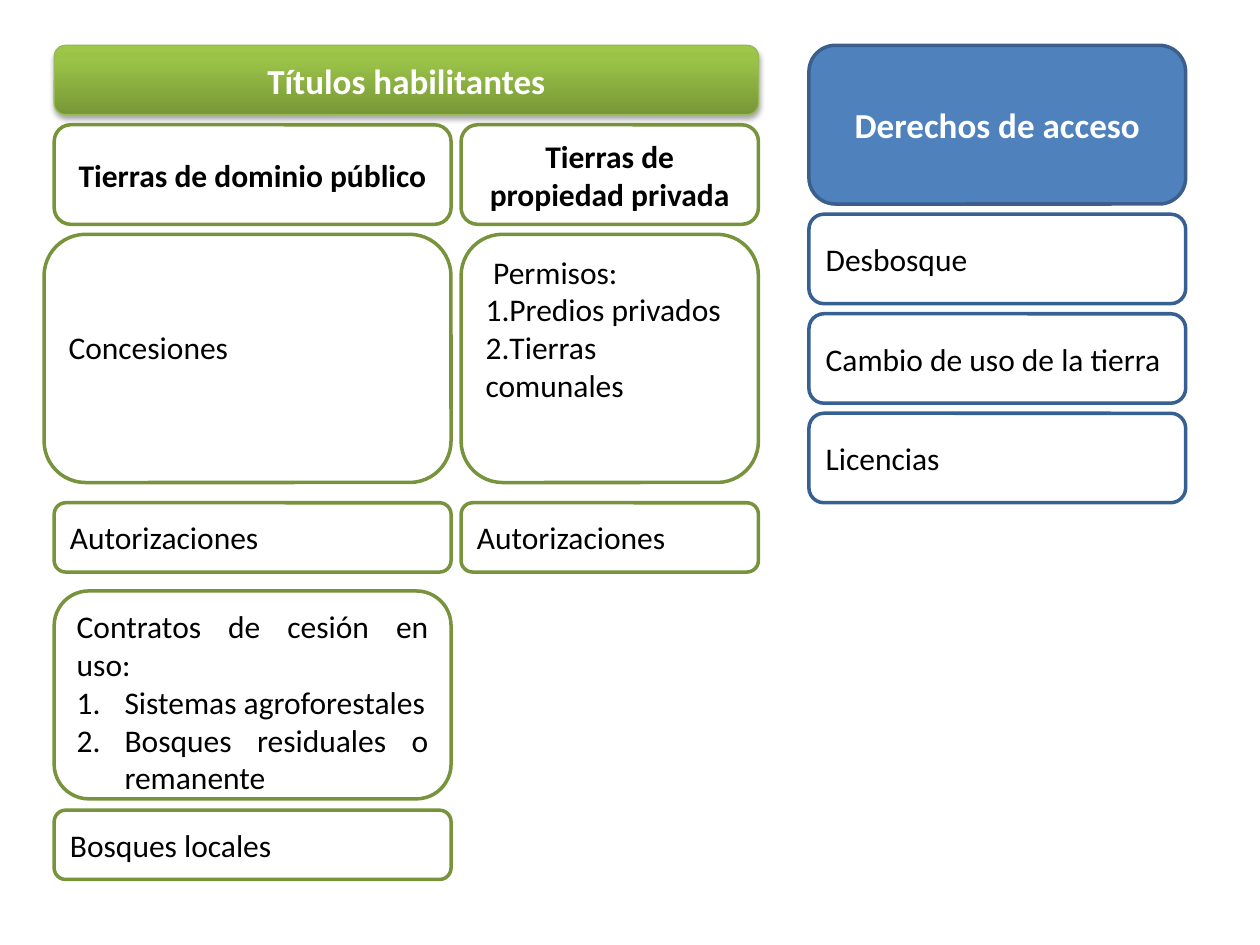
from copy import deepcopy

from lxml import etree
from pptx import Presentation
from pptx.dml.color import RGBColor
from pptx.enum import shapes, text
from pptx.oxml import ns
from pptx.util import Inches, Pt

GREEN, BLUE, WHITE, BLACK = "77933C", "376092", "FFFFFF", "000000"
LEFT, CENTER, JUSTIFY = text.PP_ALIGN.LEFT, text.PP_ALIGN.CENTER, text.PP_ALIGN.JUSTIFY
MIDDLE, TOP = text.MSO_ANCHOR.MIDDLE, text.MSO_ANCHOR.TOP

presentation = Presentation()
presentation.slide_width, presentation.slide_height = Inches(10), Inches(7.5)
slide = presentation.slides.add_slide(presentation.slide_layouts[6])


def color(hex_string):
    return RGBColor.from_string(hex_string)


def add_box(place, lines, fill=WHITE, line=GREEN, line_width=2, size=18, font_color=BLACK,
            bold=False, align=JUSTIFY, anchor=MIDDLE, margin_top=0.05,
            number_margin=0, first_indent=0):
    """Add a rounded box; every line after the first is a numbered item."""
    shape = slide.shapes.add_shape(shapes.MSO_SHAPE.ROUNDED_RECTANGLE, *map(Inches, place))
    shape.shadow.inherit = False
    shape.fill.solid()
    shape.fill.fore_color.rgb = color(fill)
    shape.line.color.rgb = color(line)
    shape.line.width = Pt(line_width)
    frame = shape.text_frame
    frame.word_wrap = True
    frame.vertical_anchor = anchor
    frame.margin_top = Inches(margin_top)
    for index, content in enumerate(lines):
        paragraph = frame.paragraphs[0] if index == 0 else frame.add_paragraph()
        paragraph.alignment = align
        run = paragraph.add_run()
        run.text = content
        run.font.name = "Calibri"
        run.font.size = Pt(size)
        run.font.bold = bold
        run.font.color.rgb = color(font_color)
        properties = paragraph._p.get_or_add_pPr()
        if index > 0:
            properties.set("marL", str(Inches(number_margin)))
            properties.set("indent", str(Inches(-0.38)))
            etree.SubElement(properties, ns.qn("a:buFont"), typeface="+mj-lt")
            etree.SubElement(properties, ns.qn("a:buAutoNum"), type="arabicPeriod")
        elif first_indent:
            properties.set("indent", str(Inches(first_indent)))
    return shape


# Column positions: left and width
public, private, access = (0.43, 3.15), (3.66, 2.36), (6.42, 2.99)

# Column headings
heading = add_box((0.43, 0.36, 5.59, 0.55), ["Títulos habilitantes"], line="98B955",
                  line_width=0.75, size=20, font_color=WHITE, bold=True, align=CENTER)
add_box((access[0], 0.36, access[1], 1.26), ["Derechos de acceso"], fill="4F81BD",
        line="3A5F8C", size=20, font_color=WHITE, bold=True, align=CENTER)

# Gradient of the green heading, dark at the bottom
heading.fill.gradient()
heading.fill.gradient_angle = 90
stop_list = heading._element.spPr.find(".//" + ns.qn("a:gsLst"))
stop_list.append(deepcopy(stop_list[-1]))
for stop, (position, shade) in zip(heading.fill.gradient_stops,
                                   [(0, "779737"), (0.8, "9BC348"), (1, "9DC746")]):
    stop.position = position
    stop.color.rgb = color(shade)

# Soft shadow under the green heading
effects = heading._element.spPr.find(ns.qn("a:effectLst"))
shadow = etree.SubElement(effects, ns.qn("a:outerShdw"), blurRad=str(Pt(3.1)),
                          dist=str(Pt(1.8)), dir="5400000", rotWithShape="0")
shadow_color = etree.SubElement(shadow, ns.qn("a:srgbClr"), val=BLACK)
etree.SubElement(shadow_color, ns.qn("a:alpha"), val="35000")

# Land types and authorizations
for (left, width), title in [(public, "Tierras de dominio público"),
                             (private, "Tierras de propiedad privada")]:
    add_box((left, 0.99, width, 0.79), [title], bold=True, align=CENTER)
    add_box((left, 3.99, width, 0.55), ["Autorizaciones"], align=LEFT)

# Public land
add_box((0.35, 1.86, 3.23, 1.97), ["Concesiones"], anchor=TOP, margin_top=0.65)
add_box((public[0], 4.69, public[1], 1.65),
        ["Contratos de cesión en uso:", "Sistemas agroforestales",
         "Bosques residuales o remanente"], anchor=TOP, number_margin=0.38)
add_box((public[0], 6.43, public[1], 0.55), ["Bosques locales"], align=LEFT)

# Private land
add_box((private[0], 1.86, private[1], 1.97),
        ["Permisos:", "Predios privados", "Tierras comunales"],
        anchor=TOP, first_indent=0.06)

# Access rights
for row, right in enumerate(["Desbosque", "Cambio de uso de la tierra", "Licencias"]):
    add_box((access[0], 1.7 + 0.79 * row, access[1], 0.71), [right], line=BLUE)

presentation.save("out.pptx")
